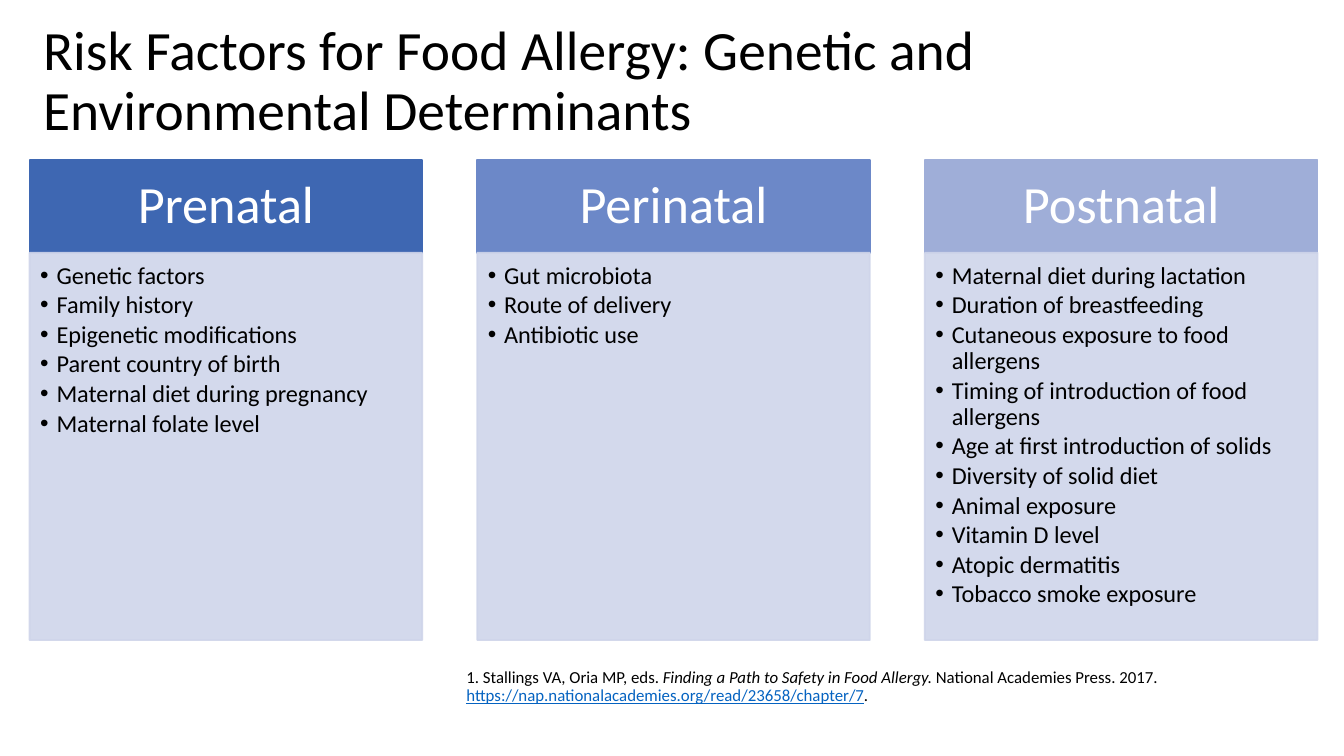
from lxml import etree
from pptx import Presentation
from pptx.dml.color import RGBColor
from pptx.enum import shapes, text
from pptx.oxml import ns
from pptx.util import Cm, Pt

FONT = "Calibri"
COLORS = {
    "text": "000000",
    "heading": "FFFFFF",
    "panel": "CFD5EA",
    "link": "0563C1",
    "Prenatal": "3E67B2",
    "Perinatal": "6C88C8",
    "Postnatal": "9FAED8",
}
FACTORS = {
    "Prenatal": [
        "Genetic factors",
        "Family history",
        "Epigenetic modifications",
        "Parent country of birth",
        "Maternal diet during pregnancy",
        "Maternal folate level",
    ],
    "Perinatal": ["Gut microbiota", "Route of delivery", "Antibiotic use"],
    "Postnatal": [
        "Maternal diet during lactation",
        "Duration of breastfeeding",
        "Cutaneous exposure to food allergens",
        "Timing of introduction of food allergens",
        "Age at first introduction of solids",
        "Diversity of solid diet",
        "Animal exposure",
        "Vitamin D level",
        "Atopic dermatitis",
        "Tobacco smoke exposure",
    ],
}
CITATION = [
    ("1. Stallings VA, Oria MP, eds. ", "plain"),
    ("Finding a Path to Safety in Food Allergy.", "italic"),
    (" National Academies Press. 2017. ", "plain"),
    ("https://nap.nationalacademies.org/read/23658/chapter/7", "link"),
    (".", "plain"),
]
LEFT, COLUMN_WIDTH, COLUMN_STEP = 0.56, 7.42, 8.46
HEADING_TOP, HEADING_HEIGHT, PANEL_HEIGHT = 3.02, 1.76, 7.32


def color(name):
    return RGBColor.from_string(COLORS[name])


def style_font(font, size, name):
    font.name = FONT
    font.size = Pt(size)
    font.color.rgb = color(name)


def set_bullet(p, char=None, indent=0):
    pPr = p._p.get_or_add_pPr()
    pPr.set("marL", str(Cm(indent)))
    pPr.set("indent", str(-Cm(indent)))
    if char:
        etree.SubElement(pPr, ns.qn("a:buFont"), typeface="Arial")
        etree.SubElement(pPr, ns.qn("a:buChar"), char=char)
    else:
        etree.SubElement(pPr, ns.qn("a:buNone"))


def set_margins(tf, left, top, right, bottom):
    tf.margin_left, tf.margin_top = Cm(left), Cm(top)
    tf.margin_right, tf.margin_bottom = Cm(right), Cm(bottom)


def place(sp, left, top, width, height):
    sp.left, sp.top, sp.width, sp.height = Cm(left), Cm(top), Cm(width), Cm(height)
    sp.text_frame.word_wrap = True
    sp.text_frame.auto_size = text.MSO_AUTO_SIZE.NONE


def add_box(s, left, top, height, fill, opacity=100):
    sp = s.shapes.add_shape(shapes.MSO_SHAPE.RECTANGLE, Cm(left), Cm(top),
                            Cm(COLUMN_WIDTH), Cm(height))
    sp.shadow.inherit = False
    sp.fill.solid()
    sp.fill.fore_color.rgb = color(fill)
    sp.line.color.rgb = color(fill)
    sp.line.width = Pt(1)
    if opacity < 100:
        for clr in sp._element.spPr.iter(ns.qn("a:srgbClr")):
            etree.SubElement(clr, ns.qn("a:alpha"), val=str(opacity * 1000))
    sp.text_frame.word_wrap = True
    return sp


def add_heading(s, left, label):
    tf = add_box(s, left, HEADING_TOP, HEADING_HEIGHT, label).text_frame
    set_margins(tf, 0.56, 0.3, 0.56, 0.3)
    tf.vertical_anchor = text.MSO_ANCHOR.MIDDLE
    tf.text = label
    p = tf.paragraphs[0]
    p.alignment = text.PP_ALIGN.CENTER
    p.line_spacing = 0.9
    style_font(p.runs[0].font, 28, "heading")


def add_factor_list(s, left, items):
    sp = add_box(s, left, HEADING_TOP + HEADING_HEIGHT, PANEL_HEIGHT, "panel", 90)
    tf = sp.text_frame
    set_margins(tf, 0.2, 0.2, 0.26, 0.28)
    tf.vertical_anchor = text.MSO_ANCHOR.TOP
    tf.text = "\n".join(items)
    for p in tf.paragraphs:
        set_bullet(p, "•", 0.31)
        p.alignment = text.PP_ALIGN.LEFT
        p.line_spacing = 0.9
        p.space_after = Pt(1.75)
        style_font(p.runs[0].font, 13, "text")


def fill_title(sp):
    place(sp, LEFT, 0.36, 24.33, 2.39)
    tf = sp.text_frame
    tf.vertical_anchor = text.MSO_ANCHOR.MIDDLE
    tf.text = "Risk Factors for Food Allergy: Genetic and Environmental Determinants"
    p = tf.paragraphs[0]
    p.alignment = text.PP_ALIGN.LEFT
    p.line_spacing = 0.9
    style_font(p.runs[0].font, 29.7, "text")


def fill_citation(sp):
    place(sp, 8.56, 12.52, 16.84, 1.52)
    p = sp.text_frame.paragraphs[0]
    set_bullet(p)
    p.line_spacing = 0.9
    p.space_before = Pt(0)
    for part, kind in CITATION:
        r = p.add_run()
        r.text = part
        style_font(r.font, 9, "link" if kind == "link" else "text")
        r.font.italic = kind == "italic"
        r.font.underline = kind == "link"


def main():
    prs = Presentation()
    prs.slide_width, prs.slide_height = Cm(25.4), Cm(14.29)
    s = prs.slides.add_slide(prs.slide_layouts[1])
    fill_title(s.shapes.title)
    for i, (label, items) in enumerate(FACTORS.items()):
        left = LEFT + i * COLUMN_STEP
        add_heading(s, left, label)
        add_factor_list(s, left, items)
    fill_citation(s.placeholders[1])
    prs.save("out.pptx")


if __name__ == "__main__":
    main()
